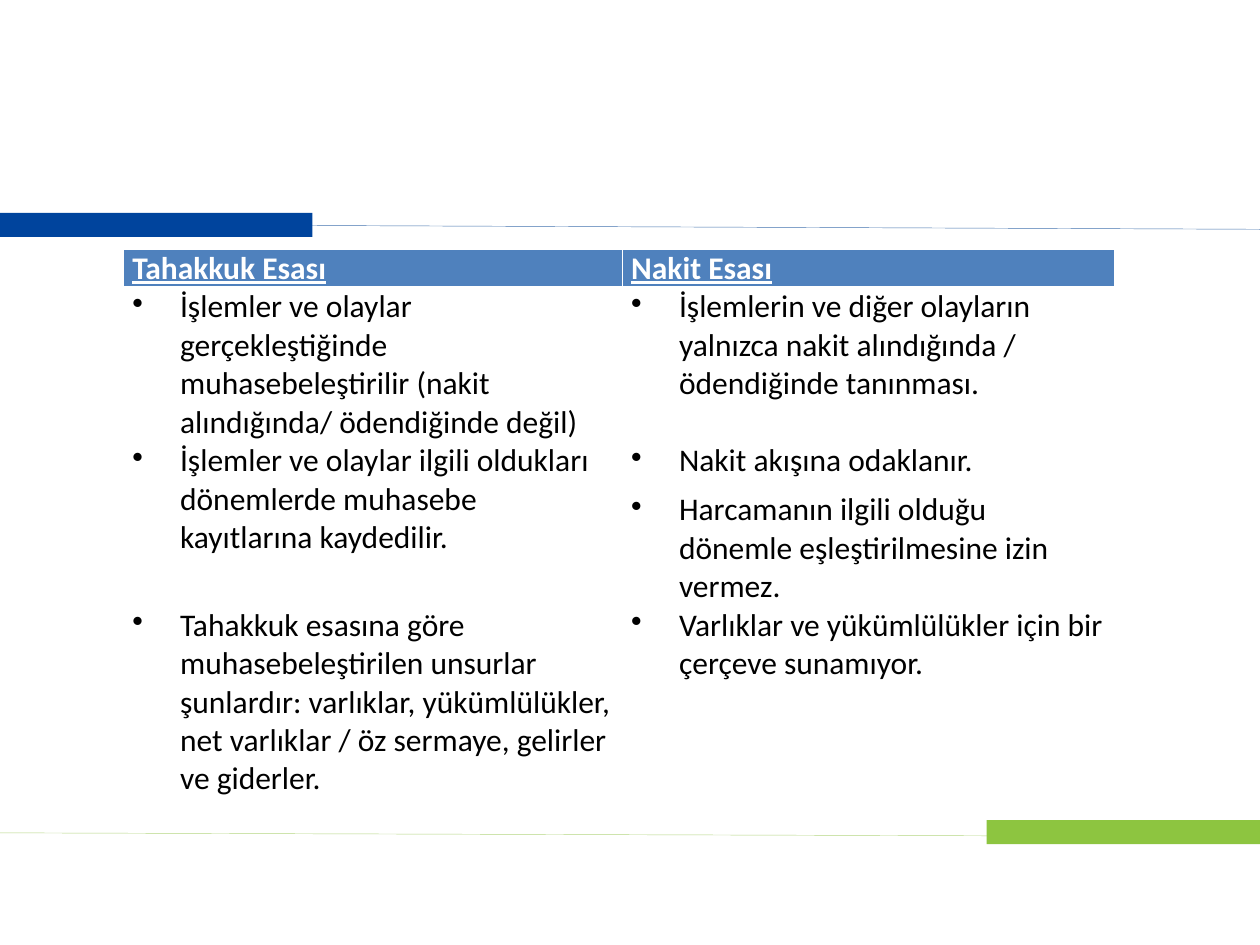
from dataclasses import dataclass

from lxml import etree
from pptx import Presentation
from pptx.dml.color import RGBColor
from pptx.enum import shapes, text
from pptx.oxml import ns
from pptx.util import Inches, Pt


@dataclass(frozen=True)
class Theme:
    font: str = "Calibri"
    size: float = 18
    spacing: float = 3
    white: str = "FFFFFF"
    black: str = "000000"
    header: str = "4F81BD"
    blue: str = "00449D"
    blue_line: str = "4372AF"
    green: str = "8DC540"
    green_line: str = "B5D782"
    hairline: float = 0.25
    border: float = 1
    header_border: float = 3


@dataclass(frozen=True)
class Band:
    """A coloured bar with the thin rule that runs beside it."""
    left: float
    top: float
    width: float
    fill: str
    line: str
    start: tuple[float, float]
    end: tuple[float, float]


THEME = Theme()
BAND_HEIGHT = 0.19
INDENT, TAB = 0.38, 0.22
TABLE_LEFT, TABLE_TOP = 0.98, 1.98
COLUMN_WIDTHS = (3.96, 3.91)
ROW_HEIGHTS = (0.28, 0.85, 1.26, 1.13)

BANDS = (
    Band(0, 1.69, 2.48, THEME.blue, THEME.blue_line, (0.01, 1.78), (10, 1.82)),
    Band(7.83, 6.51, 2.17, THEME.green, THEME.green_line, (10, 6.64), (0, 6.61)),
)

# Each cell is a tuple of paragraphs; the first row is the header.
ROWS = (
    (("Tahakkuk Esası",), ("Nakit Esası",)),
    (
        ("İşlemler ve olaylar gerçekleştiğinde muhasebeleştirilir "
         "(nakit alındığında/ ödendiğinde değil)",),
        ("İşlemlerin ve diğer olayların yalnızca nakit alındığında / "
         "ödendiğinde tanınması.",),
    ),
    (
        ("İşlemler ve olaylar ilgili oldukları dönemlerde muhasebe "
         "kayıtlarına kaydedilir. ",),
        ("Nakit akışına odaklanır.",
         "Harcamanın ilgili olduğu dönemle eşleştirilmesine izin vermez."),
    ),
    (
        ("Tahakkuk esasına göre muhasebeleştirilen unsurlar şunlardır: "
         "varlıklar, yükümlülükler, net varlıklar / öz sermaye, gelirler "
         "ve giderler.",),
        ("Varlıklar ve yükümlülükler için bir çerçeve sunamıyor.",),
    ),
)


def add_element(parent, tag: str, **attributes):
    element = etree.SubElement(parent, ns.qn(tag))
    for name, value in attributes.items():
        element.set(name, str(value))
    return element


def draw_band(slide, band: Band) -> None:
    rule = slide.shapes.add_connector(
        shapes.MSO_CONNECTOR.STRAIGHT,
        *(Inches(value) for value in band.start + band.end))
    rule.line.color.rgb = RGBColor.from_string(band.line)
    rule.line.width = Pt(THEME.hairline)
    add_element(rule._element.spPr, "a:effectLst")

    bar = slide.shapes.add_shape(
        shapes.MSO_SHAPE.RECTANGLE, Inches(band.left), Inches(band.top),
        Inches(band.width), Inches(BAND_HEIGHT))
    bar.shadow.inherit = False
    bar.fill.solid()
    bar.fill.fore_color.rgb = RGBColor.from_string(band.fill)
    bar.line.fill.background()


def add_bullet(paragraph) -> None:
    """Hang the paragraph behind a round bullet."""
    properties = paragraph._p.get_or_add_pPr()
    properties.set("marL", str(Inches(INDENT)))
    properties.set("indent", str(-Inches(INDENT)))
    add_element(properties, "a:buChar", char="•")
    tabs = add_element(properties, "a:tabLst")
    add_element(tabs, "a:tab", pos=Inches(TAB), algn="l")


def write_text(frame, paragraphs: tuple[str, ...], *, color: str,
               bold: bool = False, underline: bool = False,
               bullet: bool = False) -> None:
    frame.word_wrap = True
    for index, words in enumerate(paragraphs):
        paragraph = frame.add_paragraph() if index else frame.paragraphs[0]
        if bullet:
            add_bullet(paragraph)
        if index:
            paragraph.space_before = Pt(THEME.spacing)
        paragraph.space_after = Pt(THEME.spacing)
        run = paragraph.add_run()
        run.text = words
        run.font.name = THEME.font
        run.font.size = Pt(THEME.size)
        run.font.bold = bold
        run.font.underline = underline
        run.font.color.rgb = RGBColor.from_string(color)


def set_borders(cell, bottom: float, top: float) -> None:
    """Draw white borders; call before the fill, which must follow them."""
    properties = cell._tc.get_or_add_tcPr()
    widths = {"L": THEME.border, "R": THEME.border, "T": top, "B": bottom}
    for side, width in widths.items():
        line = add_element(properties, f"a:ln{side}", w=Pt(width))
        fill = add_element(line, "a:solidFill")
        add_element(fill, "a:srgbClr", val=THEME.white)


def fill_cell(cell, paragraphs: tuple[str, ...], row: int) -> None:
    header = row == 0
    cell.margin_left = cell.margin_right = Inches(0.07)
    cell.margin_top = cell.margin_bottom = 0
    cell.vertical_anchor = text.MSO_ANCHOR.TOP
    set_borders(cell,
                bottom=THEME.header_border if header else THEME.border,
                top=THEME.header_border if row == 1 else THEME.border)
    if header:
        cell.fill.solid()
        cell.fill.fore_color.rgb = RGBColor.from_string(THEME.header)
    else:
        cell.fill.background()
    write_text(cell.text_frame, paragraphs,
               color=THEME.white if header else THEME.black,
               bold=header, underline=header, bullet=not header)


def draw_comparison(slide) -> None:
    table = slide.shapes.add_table(
        len(ROWS), len(COLUMN_WIDTHS), Inches(TABLE_LEFT), Inches(TABLE_TOP),
        Inches(sum(COLUMN_WIDTHS)), Inches(sum(ROW_HEIGHTS))).table
    table.horz_banding = False
    for column, width in zip(table.columns, COLUMN_WIDTHS):
        column.width = Inches(width)
    for row, height in zip(table.rows, ROW_HEIGHTS):
        row.height = Inches(height)
    for row, cells in enumerate(ROWS):
        for column, paragraphs in enumerate(cells):
            fill_cell(table.cell(row, column), paragraphs, row)


def main() -> None:
    presentation = Presentation()
    presentation.slide_width = Inches(10)
    presentation.slide_height = Inches(7.5)
    slide = presentation.slides.add_slide(presentation.slide_layouts[6])
    for band in BANDS:
        draw_band(slide, band)
    draw_comparison(slide)
    presentation.save("out.pptx")


if __name__ == "__main__":
    main()
